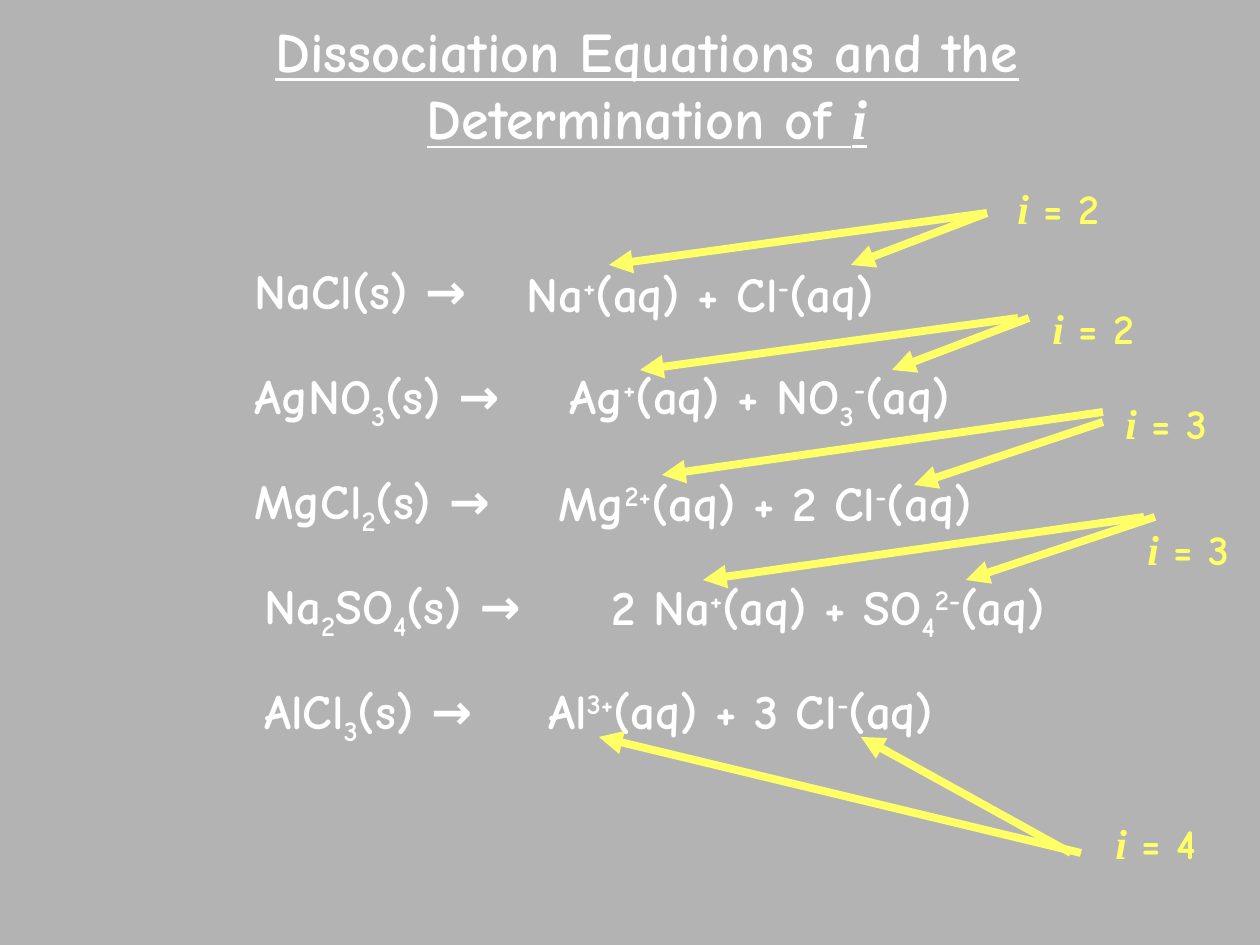
"""Build a slide on dissociation equations and the van 't Hoff factor i."""
from lxml import etree
from pptx import Presentation, util as u
from pptx.dml.color import RGBColor
from pptx.enum import shapes, text
from pptx.oxml.ns import qn

PX = 914400 // 126
WHITE, YELLOW, GREY = "FFFFFF", "FFFF66", "B3B3B3"
BASELINES = {"^": "30000", "_": "-25000"}

TITLE = "Dissociation Equations and the Determination of |*i"
EQUATIONS = [
    {"solid": "NaCl(s) →", "ions": "Na|^+|(aq) + Cl|^-|(aq)",
     "solid_box": (242, 347), "ions_at": (514, 257), "factor": 2, "label": (1005, 176),
     "arrows": [(987, 213, 609, 265), (987, 213, 851, 265)]},
    {"solid": "AgNO|_3|(s) →", "ions": "Ag|^+|(aq) + NO|_3|^-|(aq)",
     "solid_box": (242, 347), "ions_at": (557, 359), "factor": 2, "label": (1040, 296),
     "arrows": [(1018, 318, 640, 370), (1029, 318, 892, 370)]},
    {"solid": "MgCl|_2|(s) →", "ions": "Mg|^2+|(aq) + 2 Cl|^-|(aq)",
     "solid_box": (242, 347), "ions_at": (546, 466), "factor": 3, "label": (1113, 391),
     "arrows": [(1103, 412, 662, 475), (1103, 422, 914, 485)]},
    {"solid": "Na|_2|SO|_4|(s) →", "ions": "2 Na|^+|(aq) + SO|_4|^2-|(aq)",
     "solid_box": (252, 410), "ions_at": (599, 570), "factor": 3, "label": (1135, 517),
     "arrows": [(1144, 517, 703, 580), (1155, 517, 966, 580)]},
    {"solid": "AlCl|_3|(s) →", "ions": "Al|^3+|(aq) + 3 Cl|^-|(aq)",
     "solid_box": (252, 347), "ions_at": (536, 674), "factor": 4, "label": (1103, 811),
     "arrows": [(1081, 853, 599, 737), (1071, 853, 861, 737)]},
]
FIRST_TOP, ROW_STEP = 254, 105
TEXT_HEIGHT, IONS_WIDTH = 72, 588
LABEL_WIDTH, LABEL_HEIGHT = 125, 63


def rgb(value):
    """Return the colour for a hex string."""
    return RGBColor.from_string(value)


def place(shape, left, top, width, height):
    """Set the position and size of a shape in px."""
    shape.left, shape.top = left * PX, top * PX
    shape.width, shape.height = width * PX, height * PX


def write(paragraph, content, size=28, color=WHITE, underline=None):
    """Write runs split by |, where ^ raises, _ lowers and * marks a variable."""
    for piece in content.split("|"):
        mark = piece[0] if piece[0] in "^_*" else ""
        run = paragraph.add_run()
        run.text = piece[len(mark):]
        font = run.font
        font.size, font.bold, font.underline = u.Pt(size), True, underline
        font.name = "Times New Roman" if mark == "*" else "Comic Neue"
        font.italic = mark == "*"
        font.color.rgb = rgb(color)
        if mark in BASELINES:
            run._r.get_or_add_rPr().set("baseline", BASELINES[mark])


def add_text(slide, content, box, wrap=True, **style):
    """Add a text box that grows with its text."""
    shape = slide.shapes.add_textbox(*(length * PX for length in box))
    frame = shape.text_frame
    frame.word_wrap = wrap
    frame.auto_size = text.MSO_AUTO_SIZE.SHAPE_TO_FIT_TEXT
    write(frame.paragraphs[0], content, **style)


def add_arrow(slide, ends):
    """Add a thick yellow arrow pointing at its second end."""
    arrow = slide.shapes.add_connector(
        shapes.MSO_CONNECTOR.STRAIGHT, *(length * PX for length in ends))
    arrow.line.color.rgb = rgb(YELLOW)
    arrow.line.width = u.Pt(4.5)
    etree.SubElement(arrow.line._get_or_add_ln(), qn("a:tailEnd"), type="triangle")
    etree.SubElement(arrow._element.spPr, qn("a:effectLst"))


def add_title(slide):
    """Fill and place the title placeholder."""
    title = slide.shapes.title
    place(title, 164, 42, 966, 84)
    frame = title.text_frame
    frame.word_wrap = True
    frame.auto_size = text.MSO_AUTO_SIZE.NONE
    frame.vertical_anchor = text.MSO_ANCHOR.MIDDLE
    paragraph = frame.paragraphs[0]
    paragraph.alignment = text.PP_ALIGN.CENTER
    write(paragraph, TITLE, size=32, underline=True)


def main():
    """Build and save the slide."""
    presentation = Presentation()
    presentation.slide_width, presentation.slide_height = u.Inches(10), u.Inches(7.5)
    slide = presentation.slides.add_slide(presentation.slide_layouts[5])
    slide.background.fill.solid()
    slide.background.fill.fore_color.rgb = rgb(GREY)
    add_title(slide)
    for row, equation in enumerate(EQUATIONS):
        left, width = equation["solid_box"]
        top = FIRST_TOP + row * ROW_STEP
        add_text(slide, equation["solid"], (left, top, width, TEXT_HEIGHT))
        add_text(slide, equation["ions"], (*equation["ions_at"], IONS_WIDTH, TEXT_HEIGHT))
        for ends in equation["arrows"]:
            add_arrow(slide, ends)
        add_text(slide, f"*i| = {equation['factor']}",
                 (*equation["label"], LABEL_WIDTH, LABEL_HEIGHT),
                 wrap=False, size=24, color=YELLOW)
    presentation.save("out.pptx")


if __name__ == "__main__":
    main()
